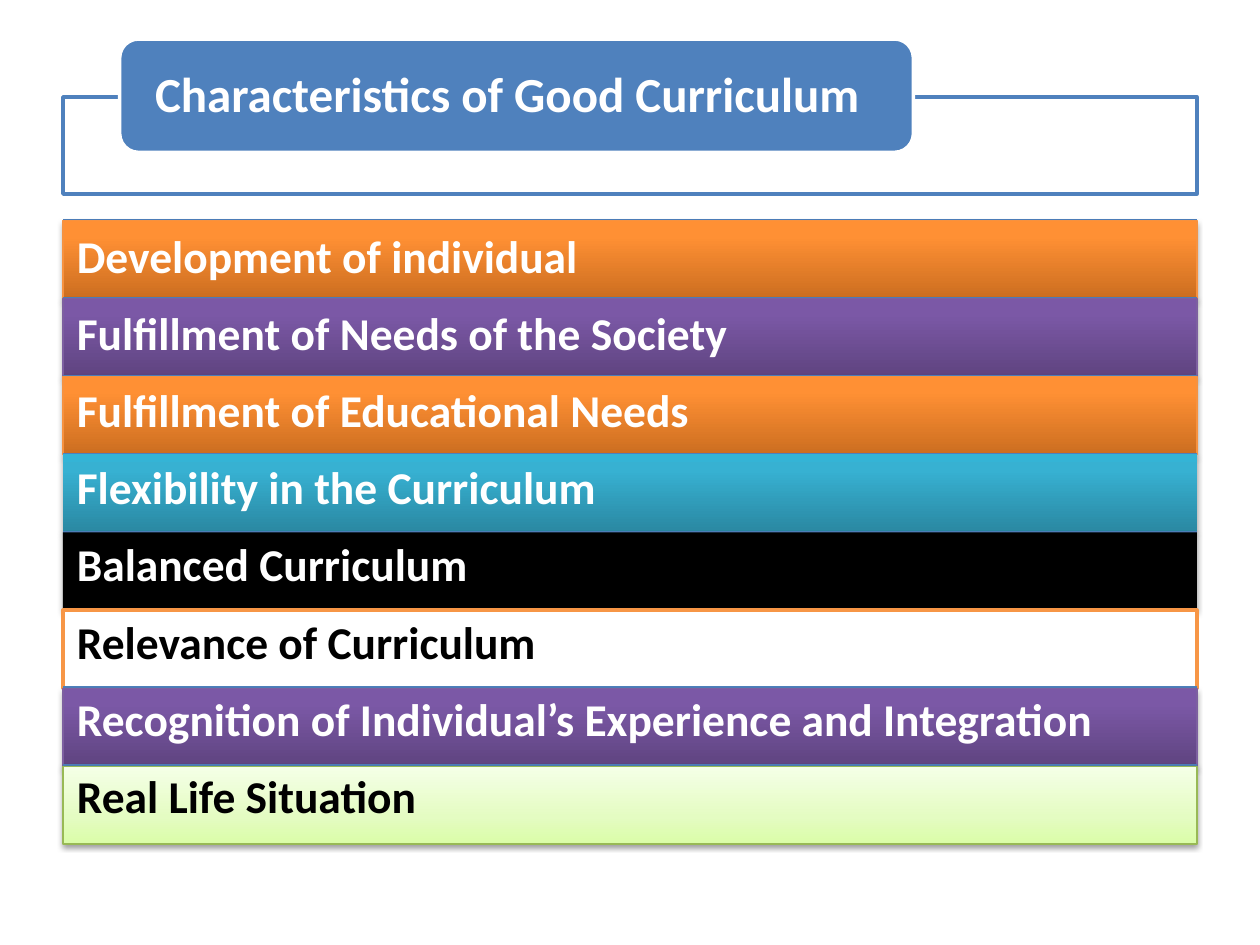
import copy
import dataclasses

import lxml.etree
import pptx
import pptx.dml.color
import pptx.enum.shapes
import pptx.enum.text
import pptx.oxml.ns
import pptx.util

Inches = pptx.util.Inches
Pt = pptx.util.Pt
Shape = pptx.enum.shapes.MSO_SHAPE
Anchor = pptx.enum.text.MSO_ANCHOR
qn = pptx.oxml.ns.qn


@dataclasses.dataclass(frozen=True)
class Theme:
    font: str = "Calibri"
    title_size: float = 28
    list_size: float = 26
    thick: float = 2
    thin: float = 0.75
    blue: str = "4F81BD"
    white: str = "FFFFFF"
    black: str = "000000"
    orange_edge: str = "F79646"


@dataclasses.dataclass(frozen=True)
class Bar:
    fill: tuple
    line: str = ""
    width: float = 0
    text: str = "FFFFFF"
    shadow: tuple = (35, 1.8)


THEME = Theme()
ORANGE = Bar(((0, "CC6E20"), (0.8, "FF9034"), (1, "FF9136")), "F69240", THEME.thin)
PURPLE = Bar(((0, "5F4480"), (0.8, "7B58A6"), (1, "7C57A8")), "7D60A0", THEME.thin)
TEAL = Bar(((0, "2A88A2"), (0.8, "37B1D2"), (1, "34B4D6")))
BLACK = Bar(((0, THEME.black),))
OUTLINE = Bar(((0, THEME.white),), THEME.orange_edge, THEME.thick, THEME.black, ())
GREEN = Bar(((0, "DAFDA7"), (0.35, "E4FCC2"), (1, "F5FFE7")), "98B955", THEME.thin,
            THEME.black, (38, 1.6))

CHARACTERISTICS = [
    ("Development of individual", ORANGE),
    ("Fulfillment of Needs of the Society", PURPLE),
    ("Fulfillment of Educational Needs", ORANGE),
    ("Flexibility in the Curriculum", TEAL),
    ("Balanced Curriculum", BLACK),
    ("Relevance of Curriculum", OUTLINE),
    ("Recognition of Individual’s Experience and Integration", PURPLE),
    ("Real Life Situation", GREEN),
]
LEFT, WIDTH = 0.5, 9
LIST_TOP, LIST_HEIGHT = 1.75, 4.95
ROW_HEIGHT = LIST_HEIGHT / len(CHARACTERISTICS)


def color(value):
    return pptx.dml.color.RGBColor.from_string(value)


def apply(target, values):
    for name, value in values.items():
        setattr(target, name, value)


def paint(fill, stops):
    if len(stops) == 1:
        fill.solid()
        fill.fore_color.rgb = color(stops[0][1])
        return
    fill.gradient()
    fill.gradient_angle = 90
    last = fill.gradient_stops[1]
    stop_list = fill._xPr.find(qn("a:gradFill")).find(qn("a:gsLst"))
    for _ in stops[2:]:
        stop_list.append(copy.deepcopy(stop_list[-1]))
    for stop, (position, value) in zip(fill.gradient_stops, stops):
        stop.color.rgb = color(value)
        stop.position = position


def add_shadow(shape, opacity, distance):
    effects = shape.element.spPr.find(qn("a:effectLst"))
    shadow = lxml.etree.SubElement(
        effects, qn("a:outerShdw"), blurRad=str(Pt(3.1)), dist=str(Pt(distance)),
        dir="5400000", rotWithShape="0")
    tint = lxml.etree.SubElement(shadow, qn("a:srgbClr"), val=THEME.black)
    lxml.etree.SubElement(tint, qn("a:alpha"), val=str(opacity * 1000))


def add_panel(page, kind, area, style):
    panel = page.shapes.add_shape(kind, *map(Inches, area))
    panel.shadow.inherit = False
    paint(panel.fill, style.fill)
    if style.line:
        panel.line.color.rgb = color(style.line)
        panel.line.width = Pt(style.width)
    else:
        panel.line.fill.background()
    if style.shadow:
        add_shadow(panel, *style.shadow)


def add_rule(page, top):
    rule = page.shapes.add_connector(
        pptx.enum.shapes.MSO_CONNECTOR.STRAIGHT,
        Inches(LEFT), Inches(top), Inches(LEFT + WIDTH), Inches(top))
    rule.line.color.rgb = color(THEME.blue)
    rule.line.width = Pt(THEME.thick)
    lxml.etree.SubElement(rule.element.spPr, qn("a:effectLst"))


def place_text(box, area, entries, size, frame_values, gap=0):
    box.element.getparent().append(box.element)
    apply(box, dict(zip(("left", "top", "width", "height"), map(Inches, area))))
    frame = box.text_frame
    apply(frame, {"word_wrap": True, "auto_size": pptx.enum.text.MSO_AUTO_SIZE.NONE,
                  **frame_values})
    for index, (text, text_color) in enumerate(entries):
        para = frame.add_paragraph() if index else frame.paragraphs[0]
        apply(para, {"alignment": pptx.enum.text.PP_ALIGN.LEFT, "line_spacing": 0.9,
                     "space_before": Pt(0), "space_after": Pt(gap)})
        properties = para._p.get_or_add_pPr()
        properties.set("marL", "0")
        properties.set("indent", "0")
        lxml.etree.SubElement(properties, qn("a:buNone"))
        span = para.add_run()
        span.text = text
        apply(span.font, {"name": THEME.font, "size": Pt(size), "bold": True})
        span.font.color.rgb = color(text_color)


def add_heading(page):
    frame = Bar(((0, THEME.white),), THEME.blue, THEME.thick, shadow=())
    tab = Bar(((0, THEME.blue),), THEME.white, THEME.thick, shadow=())
    add_panel(page, Shape.RECTANGLE, (LEFT, 0.77, WIDTH, 0.77), frame)
    add_panel(page, Shape.ROUNDED_RECTANGLE, (0.95, 0.31, 6.3, 0.9), tab)
    margins = {"margin_left": Inches(0.24), "margin_right": Inches(0.24),
               "margin_top": 0, "margin_bottom": 0}
    place_text(page.shapes.title, (0.99, 0.36, 6.21, 0.82),
               [("Characteristics of Good Curriculum", THEME.white)],
               THEME.title_size, {"vertical_anchor": Anchor.MIDDLE, **margins})


def add_characteristics(page):
    for index, (_, style) in enumerate(CHARACTERISTICS):
        top = LIST_TOP + index * ROW_HEIGHT
        add_rule(page, top)
        add_panel(page, Shape.RECTANGLE, (LEFT, top, WIDTH, ROW_HEIGHT), style)
    margins = {f"margin_{side}": Inches(0.11) for side in ("left", "right", "top", "bottom")}
    line_height = THEME.list_size * 1.22 * 0.9
    place_text(page.placeholders[1], (LEFT, LIST_TOP, WIDTH, LIST_HEIGHT),
               [(text, style.text) for text, style in CHARACTERISTICS],
               THEME.list_size, {"vertical_anchor": Anchor.TOP, **margins},
               gap=round(ROW_HEIGHT * 72 - line_height, 2))


def main():
    deck = pptx.Presentation()
    apply(deck, {"slide_width": Inches(10), "slide_height": Inches(7.5)})
    page = deck.slides.add_slide(deck.slide_layouts[1])
    add_heading(page)
    add_characteristics(page)
    deck.save("out.pptx")


if __name__ == "__main__":
    main()
